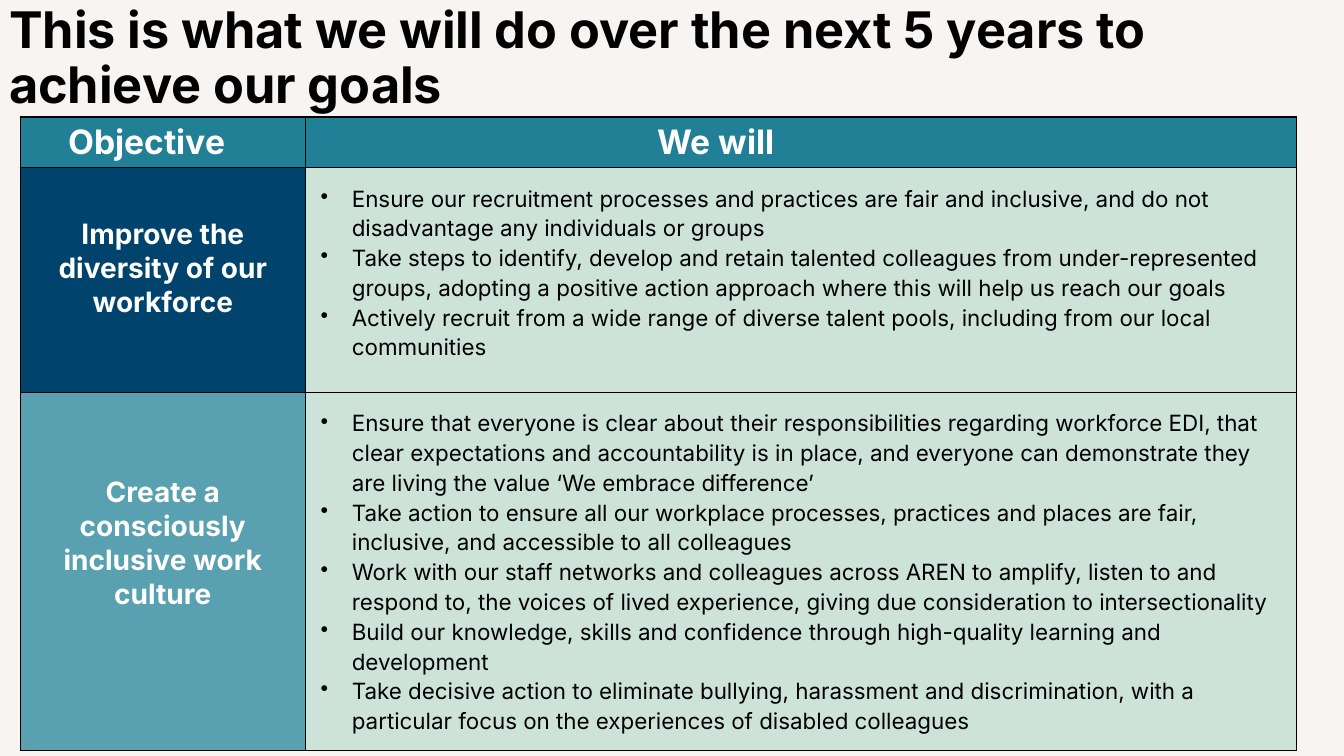
import pptx
import pptx.util
import pptx.dml.color
import pptx.enum.text
import pptx.oxml
import pptx.oxml.ns
from pptx.util import Inches

HUES = {
    "page": "F7F4F1", "ink": "000000", "white": "FFFFFF", "head": "228096",
    "navy": "00436C", "teal": "59A0B0", "mint": "CDE3DA",
}
HEADS = [("Objective", 0.48), ("We will", 3.49)]
GOALS = [
    ("Improve the diversity of our workforce", "navy", 0.49, [
        "Ensure our recruitment processes and practices are fair and inclusive, "
        "and do not disadvantage any individuals or groups",
        "Take steps to identify, develop and retain talented colleagues from "
        "under-represented groups, adopting a positive action approach where "
        "this will help us reach our goals",
        "Actively recruit from a wide range of diverse talent pools, including "
        "from our local communities",
    ]),
    ("Create a consciously inclusive work culture", "teal", 0.82, [
        "Ensure that everyone is clear about their responsibilities regarding "
        "workforce EDI, that clear expectations and accountability is in place, "
        "and everyone can demonstrate they are living the value ‘We embrace "
        "difference’",
        "Take action to ensure all our workplace processes, practices and places "
        "are fair, inclusive, and accessible to all colleagues",
        "Work with our staff networks and colleagues across AREN to amplify, "
        "listen to and respond to, the voices of lived experience, giving due "
        "consideration to intersectionality",
        "Build our knowledge, skills and confidence through high-quality "
        "learning and development",
        "Take decisive action to eliminate bullying, harassment and "
        "discrimination, with a particular focus on the experiences of disabled "
        "colleagues",
    ]),
]


def color(name):
    return pptx.dml.color.RGBColor.from_string(HUES[name])


class Deck:
    face = "Inter"
    align = pptx.enum.text.PP_ALIGN

    def __init__(self):
        self.file = pptx.Presentation()
        self.file.slide_width = Inches(13.33)
        self.file.slide_height = Inches(7.5)
        self.slide = self.file.slides.add_slide(self.file.slide_layouts[5])
        fill = self.slide.background.fill
        fill.solid()
        fill.fore_color.rgb = color("page")

    def style(self, para, size, hue, bold, align, space=1.0):
        para.alignment = align
        para.line_spacing = space
        font = para.font
        font.name, font.size, font.bold = self.face, pptx.util.Pt(size), bold
        font.color.rgb = color(hue)

    def title(self, text, left, top, width, height):
        box = self.slide.shapes.title
        box.left, box.top = Inches(left), Inches(top)
        box.width, box.height = Inches(width), Inches(height)
        frame = box.text_frame
        frame.text = text
        frame.word_wrap = True
        frame.auto_size = pptx.enum.text.MSO_AUTO_SIZE.NONE
        frame.vertical_anchor = pptx.enum.text.MSO_ANCHOR.TOP
        self.style(frame.paragraphs[0], 36, "ink", True, self.align.LEFT, 0.9)

    def table(self, left, top, cols, rows):
        grid = self.slide.shapes.add_table(
            len(rows), len(cols), Inches(left), Inches(top),
            Inches(sum(cols)), Inches(sum(rows))).table
        grid.first_row = grid.horz_banding = False
        for col, width in zip(grid.columns, cols):
            col.width = Inches(width)
        for row, height in zip(grid.rows, rows):
            row.height = Inches(height)
        return grid

    def cell(self, cell, text, fill, pads):
        """Fill and frame a cell; pads are left, top, right, bottom."""
        cell.text = text
        (cell.margin_left, cell.margin_top,
         cell.margin_right, cell.margin_bottom) = map(Inches, pads)
        props = cell._tc.get_or_add_tcPr()
        for side in ("lnL", "lnR", "lnT", "lnB"):
            props.append(pptx.oxml.parse_xml(
                f'<a:{side} {pptx.oxml.ns.nsdecls("a")} w="12700"><a:solidFill>'
                f'<a:srgbClr val="{HUES["ink"]}"/></a:solidFill></a:{side}>'))
        cell.fill.solid()
        cell.fill.fore_color.rgb = color(fill)
        return cell.text_frame.paragraphs

    def bullet(self, para):
        props = para._p.get_or_add_pPr()
        props.set("marL", str(Inches(0.31)))
        props.set("indent", str(Inches(-0.31)))
        props.append(pptx.oxml.parse_xml(
            f'<a:buChar {pptx.oxml.ns.nsdecls("a")} char="•"/>'))


def main():
    deck = Deck()
    deck.title("This is what we will do over the next 5 years to achieve our goals",
               -0.01, 0, 13.17, 1.27)
    grid = deck.table(0.2, 1.16, [2.83, 9.83], [0.5, 2.23, 3.55])
    for col, (text, left) in enumerate(HEADS):
        paras = deck.cell(grid.cell(0, col), text, "head", (left, 0.05, 0.1, 0.05))
        deck.style(paras[0], 24, "white", True, deck.align.LEFT)
    for row, (goal, fill, top, steps) in enumerate(GOALS, 1):
        paras = deck.cell(grid.cell(row, 0), goal, fill, (0.15, top, 0.15, 0.15))
        deck.style(paras[0], 20, "white", True, deck.align.CENTER)
        for para in deck.cell(grid.cell(row, 1), "\n".join(steps), "mint", [0.15] * 4):
            deck.bullet(para)
            deck.style(para, 16, "ink", False, deck.align.LEFT, 1.1)
    deck.file.save("out.pptx")


if __name__ == "__main__":
    main()
